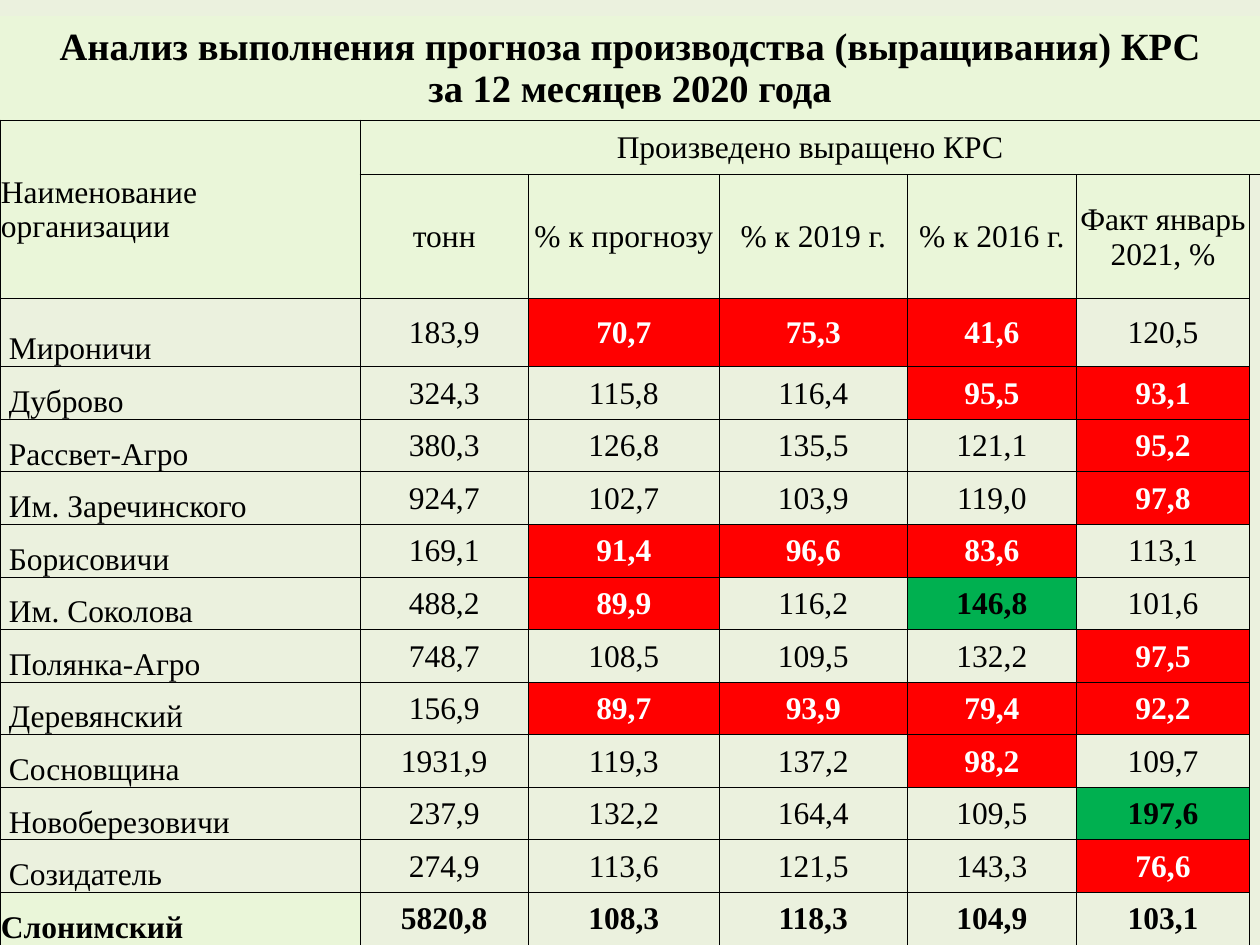
from lxml.etree import SubElement
from pptx import Presentation
from pptx.dml.color import RGBColor as Rgb
from pptx.enum.text import MSO_ANCHOR as Anchor, PP_ALIGN as Align
from pptx.oxml.ns import qn
from pptx.util import Cm, Pt

# Content
TITLE = ["Анализ выполнения прогноза производства (выращивания) КРС",
         "за 12 месяцев 2020 года"]
NAME = "Наименование организации"
GROUP = "Произведено выращено КРС"
HEADS = ["тонн", "% к прогнозу", "% к 2019 г.", "% к 2016 г.",
         "Факт январь 2021, %"]
FARMS = [
    ("Мироничи", 183.9, 70.7, 75.3, 41.6, 120.5),
    ("Дуброво", 324.3, 115.8, 116.4, 95.5, 93.1),
    ("Рассвет-Агро", 380.3, 126.8, 135.5, 121.1, 95.2),
    ("Им. Заречинского", 924.7, 102.7, 103.9, 119.0, 97.8),
    ("Борисовичи", 169.1, 91.4, 96.6, 83.6, 113.1),
    ("Им. Соколова", 488.2, 89.9, 116.2, 146.8, 101.6),
    ("Полянка-Агро", 748.7, 108.5, 109.5, 132.2, 97.5),
    ("Деревянский", 156.9, 89.7, 93.9, 79.4, 92.2),
    ("Сосновщина", 1931.9, 119.3, 137.2, 98.2, 109.7),
    ("Новоберезовичи", 237.9, 132.2, 164.4, 109.5, 197.6),
    ("Созидатель", 274.9, 113.6, 121.5, 143.3, 76.6),
]
TOTAL = ("Слонимский", 5820.8, 108.3, 118.3, 104.9, 103.1)

# Look
HEX = {"page": "EBF1DE", "head": "EAF6D9", "low": "FF0000", "top": "00B050",
       "ink": "000000", "white": "FFFFFF"}
FONT = "Times New Roman"
COLS = [7.26, 3.39, 3.85, 3.79, 3.41, 3.49, 0.21]
ROWS = [2.1, 1.1, 2.5, 1.37] + [1.06] * len(FARMS)
TOP = 0.32
BEST = (4, 5)  # columns whose highest value is marked


def rgb(key):
    return Rgb.from_string(HEX[key])


def edge(cell, sides):
    """Draw thin lines on the given sides and none on the others."""
    props = cell._tc.get_or_add_tcPr()
    for spot, side in enumerate("LRTB"):
        line = SubElement(props, qn(f"a:ln{side}"), w=str(Pt(0.5)))
        if side in sides:
            fill = SubElement(line, qn("a:solidFill"))
            SubElement(fill, qn("a:srgbClr"), val=HEX["ink"])
        else:
            SubElement(line, qn("a:noFill"))
        props.insert(spot, line)


def put(cell, text, fill="page", ink="ink", bold=False, size=18,
        align=Align.CENTER, anchor=Anchor.MIDDLE):
    cell.text = text
    cell.vertical_anchor = anchor
    cell.fill.solid()
    cell.fill.fore_color.rgb = rgb(fill)
    for para in cell.text_frame.paragraphs:
        para.alignment = align
        font = para.font
        font.name, font.size, font.bold = FONT, Pt(size), bold
        font.color.rgb = rgb(ink)


def show(num):
    return f"{num:.1f}".replace(".", ",")


deck = Presentation()
deck.slide_width, deck.slide_height = Cm(25.4), Cm(19.05)
slide = deck.slides.add_slide(deck.slide_layouts[6])
back = slide.background.fill
back.solid()
back.fore_color.rgb = rgb("page")

# Table grid
grid = slide.shapes.add_table(len(ROWS), len(COLS), 0, Cm(TOP),
                              Cm(sum(COLS)), Cm(sum(ROWS))).table
grid.first_row = grid.horz_banding = False
for col, wide in zip(grid.columns, COLS):
    col.width = Cm(wide)
for r, (row, high) in enumerate(zip(grid.rows, ROWS)):
    row.height = Cm(high)
    for cell in row.cells:
        cell.margin_left = cell.margin_right = cell.margin_top = Cm(0.02)
        cell.margin_bottom = 0
        cell.fill.background()
        edge(cell, "LRTB" if r else "B")

# Headings
last = len(COLS) - 1
grid.cell(0, 0).merge(grid.cell(0, last))
grid.cell(1, 0).merge(grid.cell(2, 0))
grid.cell(1, 1).merge(grid.cell(1, last))
grid.cell(2, last).merge(grid.cell(len(ROWS) - 1, last))
put(grid.cell(0, 0), "\n".join(TITLE), "head", bold=True, size=22)
put(grid.cell(1, 0), NAME, "head", align=Align.LEFT)
put(grid.cell(1, 1), GROUP, "head")
for c, text in enumerate(HEADS, 1):
    put(grid.cell(2, c), text, "head")

# Farms: below 100 % is red, the best of a marked column is green
peaks = {c: max(farm[c] for farm in FARMS) for c in BEST}
for r, farm in enumerate(FARMS, 3):
    name = grid.cell(r, 0)
    put(name, farm[0], align=Align.LEFT, anchor=Anchor.BOTTOM)
    name.margin_left = Cm(0.18)
    for c, num in enumerate(farm[1:], 1):
        look = {}
        if c > 1 and num < 100:
            look = dict(fill="low", ink="white", bold=True)
        elif num == peaks.get(c):
            look = dict(fill="top", bold=True)
        put(grid.cell(r, c), show(num), **look)

# District total
end = len(ROWS) - 1
put(grid.cell(end, 0), TOTAL[0], "head", bold=True, align=Align.LEFT,
    anchor=Anchor.BOTTOM)
for c, num in enumerate(TOTAL[1:], 1):
    put(grid.cell(end, c), show(num), bold=True)

deck.save("out.pptx")
